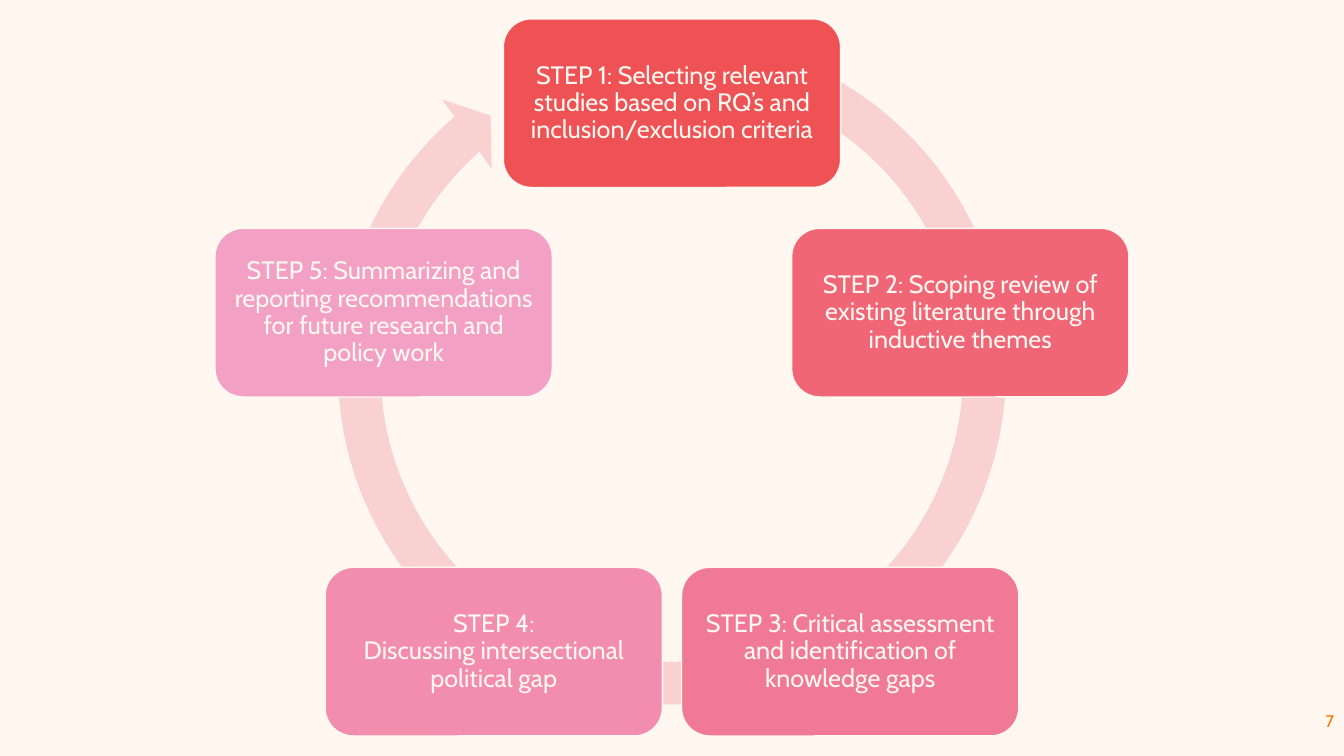
import math

from pptx import Presentation
from pptx.dml.color import RGBColor
from pptx.enum.shapes import MSO_SHAPE
from pptx.enum.text import MSO_ANCHOR, PP_ALIGN
from pptx.util import Cm, Pt

ROUNDED = MSO_SHAPE.ROUNDED_RECTANGLE
CIRCULAR_ARROW = MSO_SHAPE.CIRCULAR_ARROW
MIDDLE = MSO_ANCHOR.MIDDLE
CENTER, RIGHT = PP_ALIGN.CENTER, PP_ALIGN.RIGHT

# Clockwise from the top: text, fill
STEPS = [
    ("STEP 1: Selecting relevant studies based on RQ’s and "
     "inclusion/exclusion criteria", "EF5255"),
    ("STEP 2: Scoping review of existing literature through "
     "inductive themes", "F06677"),
    ("STEP 3: Critical assessment and identification of "
     "knowledge gaps", "F07A95"),
    ("STEP 4:\vDiscussing intersectional political gap", "F28DAF"),
    ("STEP 5: Summarizing and reporting recommendations for future "
     "research and policy work", "F3A0C5"),
]
PAGE_NUMBER = "7"

FONT = "Cabin"
CREAM, ORANGE, ARROW_PINK = "FFF7F0", "F87400", "F9D1D1"

# Lengths in centimetres
SLIDE_WIDTH, SLIDE_HEIGHT = 33.87, 19.05
CENTER_X = SLIDE_WIDTH / 2
CYCLE_Y, CYCLE_RADIUS = 10.24, 7.64
STEP_WIDTH, STEP_HEIGHT = 8.5, 4.25
STEP_INSET = 0.18
ARROW_SIZE, ARROW_TOP = 17.91, 0.38
NUMBER_WIDTH, NUMBER_HEIGHT, NUMBER_TOP = 7.62, 1.02, 17.65

# Band width, head angle, head end, tail start, head width
ARROW_SHAPE = (0.06, 3.31, 137.42, 174.07, 0.06)


def color(value):
    return RGBColor.from_string(value)


def paint(shape, fill):
    shape.shadow.inherit = False
    shape.fill.solid()
    shape.fill.fore_color.rgb = color(fill)


def write(box, text, size, text_color, alignment):
    frame = box.text_frame
    frame.text = text
    frame.word_wrap = True
    frame.vertical_anchor = MIDDLE
    para = frame.paragraphs[0]
    para.alignment = alignment
    for span in para.runs:
        span.font.name = FONT
        span.font.size = Pt(size)
        span.font.color.rgb = color(text_color)
    return frame


def add_cycle_arrow(page):
    arrow = page.shapes.add_shape(
        CIRCULAR_ARROW, Cm(CENTER_X - ARROW_SIZE / 2), Cm(ARROW_TOP),
        Cm(ARROW_SIZE), Cm(ARROW_SIZE))
    for index, value in enumerate(ARROW_SHAPE):
        arrow.adjustments[index] = value
    paint(arrow, ARROW_PINK)
    arrow.line.fill.background()


def add_step(page, index, text, fill):
    """Place a step box on the corner of a regular polygon."""
    angle = 2 * math.pi * index / len(STEPS)
    left = CENTER_X + CYCLE_RADIUS * math.sin(angle) - STEP_WIDTH / 2
    top = CYCLE_Y - CYCLE_RADIUS * math.cos(angle) - STEP_HEIGHT / 2
    box = page.shapes.add_shape(
        ROUNDED, Cm(left), Cm(top), Cm(STEP_WIDTH), Cm(STEP_HEIGHT))
    paint(box, fill)
    box.line.color.rgb = color(CREAM)
    box.line.width = Pt(1)
    frame = write(box, text, 18, CREAM, CENTER)
    frame.margin_left = frame.margin_right = Cm(STEP_INSET)
    frame.margin_top = frame.margin_bottom = Cm(STEP_INSET)
    frame.paragraphs[0].line_spacing = 0.9


def add_page_number(page):
    box = page.shapes.add_textbox(
        Cm(SLIDE_WIDTH - NUMBER_WIDTH), Cm(NUMBER_TOP),
        Cm(NUMBER_WIDTH), Cm(NUMBER_HEIGHT))
    write(box, PAGE_NUMBER, 12, ORANGE, RIGHT)


def main():
    deck = Presentation()
    deck.slide_width, deck.slide_height = Cm(SLIDE_WIDTH), Cm(SLIDE_HEIGHT)
    page = deck.slides.add_slide(deck.slide_layouts[6])
    page.background.fill.solid()
    page.background.fill.fore_color.rgb = color(CREAM)
    add_page_number(page)
    add_cycle_arrow(page)
    for index, (text, fill) in enumerate(STEPS):
        add_step(page, index, text, fill)
    deck.save("out.pptx")


if __name__ == "__main__":
    main()
